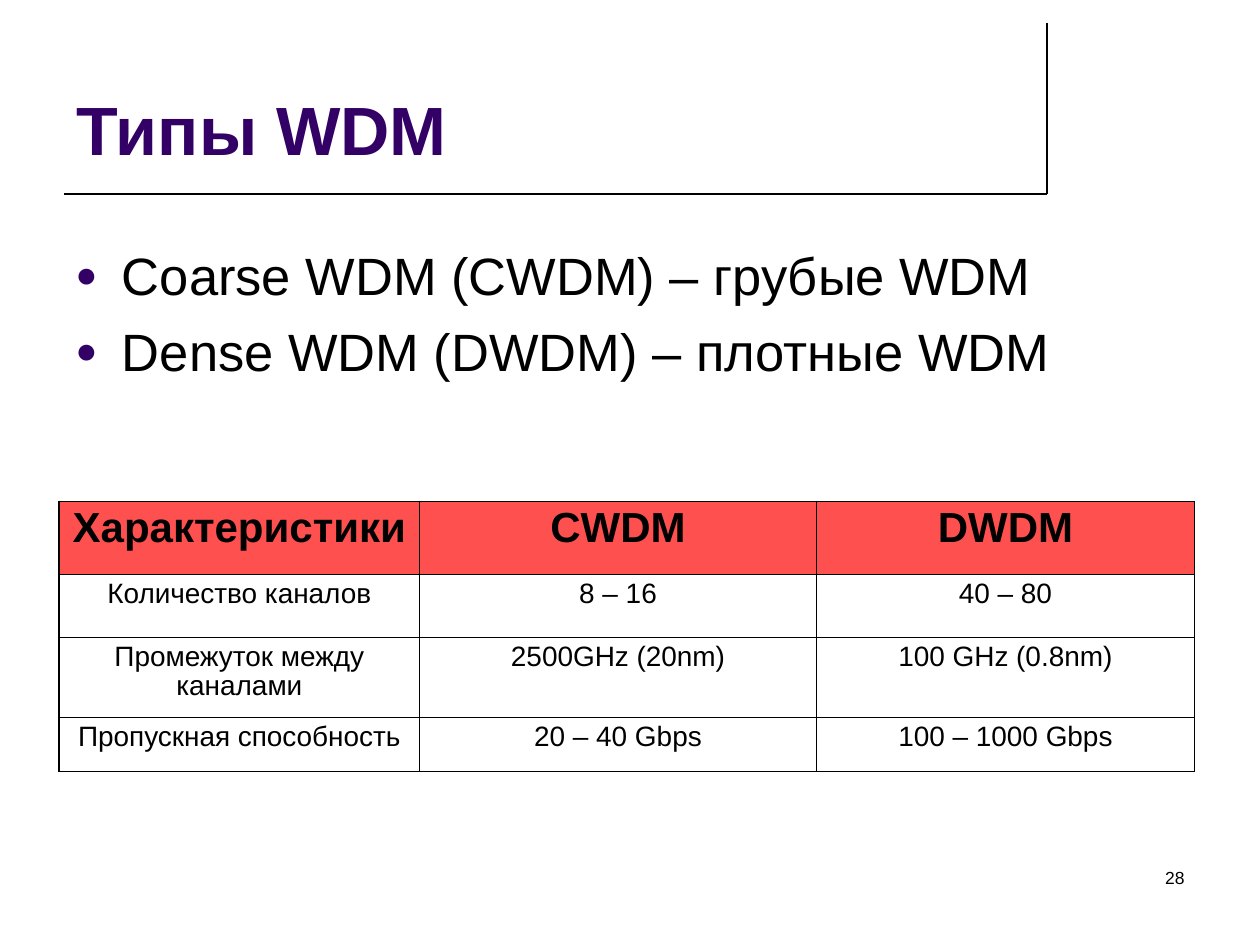
from dataclasses import dataclass

from lxml import etree
from pptx import Presentation
from pptx.dml.color import RGBColor
from pptx.enum.shapes import MSO_CONNECTOR
from pptx.enum.text import MSO_ANCHOR, PP_ALIGN
from pptx.oxml.ns import qn
from pptx.util import Inches, Pt


@dataclass(frozen=True)
class Theme:
    font: str = "Arial"
    accent: str = "330066"
    ink: str = "000000"
    header: str = "FF5050"
    title: float = 39
    body: float = 30
    table_head: float = 24
    table_cell: float = 16
    number: float = 10
    rule: float = 1
    outer: float = 1.08
    inner: float = 0.45


THEME = Theme()

BULLETS = ["Coarse WDM (CWDM) – грубые WDM", "Dense WDM (DWDM) – плотные WDM"]
ROWS = [
    ["Характеристики", "CWDM", "DWDM"],
    ["Количество каналов", "8 – 16", "40 – 80"],
    ["Промежуток между каналами", "2500GHz (20nm)", "100 GHz (0.8nm)"],
    ["Пропускная способность", "20 – 40 Gbps", "100 – 1000 Gbps"],
]
COLUMN_WIDTHS = [2.86, 3.15, 3]
ROW_HEIGHTS = [0.58, 0.5, 0.63, 0.43]


def add_bullet(para):
    """Give a paragraph a hanging, coloured bullet."""
    props = para._p.get_or_add_pPr()
    props.set("marL", str(Inches(0.37)))
    props.set("indent", str(-Inches(0.37)))
    colour = etree.SubElement(props, qn("a:buClr"))
    etree.SubElement(colour, qn("a:srgbClr"), val=THEME.accent)
    etree.SubElement(props, qn("a:buSzPct"), val="70000")
    etree.SubElement(props, qn("a:buFont"), typeface=THEME.font)
    etree.SubElement(props, qn("a:buChar"), char="●")


def write_text(frame, lines, *, size, colour=THEME.ink, bold=False,
               align=PP_ALIGN.LEFT, spacing=None, gap=0, bullet=False):
    """Fill a text frame, one paragraph a line."""
    frame.word_wrap = True
    for index, line in enumerate(lines):
        para = frame.add_paragraph() if index else frame.paragraphs[0]
        para.alignment = align
        if spacing:
            para.line_spacing = spacing
        if index:
            para.space_before = Pt(gap)
        if bullet:
            add_bullet(para)
        span = para.add_run()
        span.text = line
        span.font.name = THEME.font
        span.font.size = Pt(size)
        span.font.bold = bold
        span.font.color.rgb = RGBColor.from_string(colour)


def add_rule(page, start, end):
    rule = page.shapes.add_connector(
        MSO_CONNECTOR.STRAIGHT, *map(Inches, start + end))
    rule.line.color.rgb = RGBColor.from_string(THEME.ink)
    rule.line.width = Pt(THEME.rule)
    etree.SubElement(rule._element.spPr, qn("a:effectLst"))


def add_title(page, text):
    title = page.shapes.title
    title.left, title.top, title.width, title.height = map(
        Inches, (0.51, 0.13, 7.79, 1.26))
    title.text_frame.vertical_anchor = MSO_ANCHOR.BOTTOM
    write_text(title.text_frame, [text], size=THEME.title,
               colour=THEME.accent, bold=True)


def add_text(page, place, lines, **style):
    box = page.shapes.add_textbox(*map(Inches, place))
    write_text(box.text_frame, lines, **style)


def set_borders(cell, widths):
    """Draw the cell's sides; widths are keyed L, R, T, B in that order."""
    props = cell._tc.get_or_add_tcPr()
    for side, width in widths.items():
        line = etree.SubElement(props, qn(f"a:ln{side}"), w=str(Pt(width)))
        fill = etree.SubElement(line, qn("a:solidFill"))
        etree.SubElement(fill, qn("a:srgbClr"), val=THEME.ink)


def add_grid(page, left, top):
    grid = page.shapes.add_table(
        len(ROWS), len(COLUMN_WIDTHS), Inches(left), Inches(top),
        Inches(sum(COLUMN_WIDTHS)), Inches(sum(ROW_HEIGHTS))).table
    for column, width in zip(grid.columns, COLUMN_WIDTHS):
        column.width = Inches(width)
    last = len(COLUMN_WIDTHS) - 1
    for r, (texts, height) in enumerate(zip(ROWS, ROW_HEIGHTS)):
        grid.rows[r].height = Inches(height)
        head = r == 0
        for c, text in enumerate(texts):
            cell = grid.cell(r, c)
            set_borders(cell, {
                "L": THEME.outer if c == 0 else THEME.inner,
                "R": THEME.outer if c == last else THEME.inner,
                "T": THEME.outer if head else THEME.inner,
                "B": THEME.inner,
            })
            if head:
                cell.fill.solid()
                cell.fill.fore_color.rgb = RGBColor.from_string(THEME.header)
            else:
                cell.fill.background()
            write_text(cell.text_frame, [text], bold=head,
                       size=THEME.table_head if head else THEME.table_cell,
                       align=PP_ALIGN.CENTER, spacing=0.93)


def main():
    deck = Presentation()
    deck.slide_width, deck.slide_height = Inches(10), Inches(7.5)
    page = deck.slides.add_slide(deck.slide_layouts[5])

    # Title with its corner rules
    add_rule(page, (8.31, 0.18), (8.31, 1.54))
    add_rule(page, (0.51, 1.54), (8.31, 1.54))
    add_title(page, "Типы WDM")

    # Bullets
    add_text(page, (0.5, 1.88, 9, 1.6), BULLETS, size=THEME.body,
             gap=7.5, bullet=True)

    # Comparison table
    add_grid(page, 0.47, 3.98)

    # Slide number
    add_text(page, (7.17, 6.83, 2.33, 0.5), ["28"], size=THEME.number,
             align=PP_ALIGN.RIGHT)

    deck.save("out.pptx")


if __name__ == "__main__":
    main()
